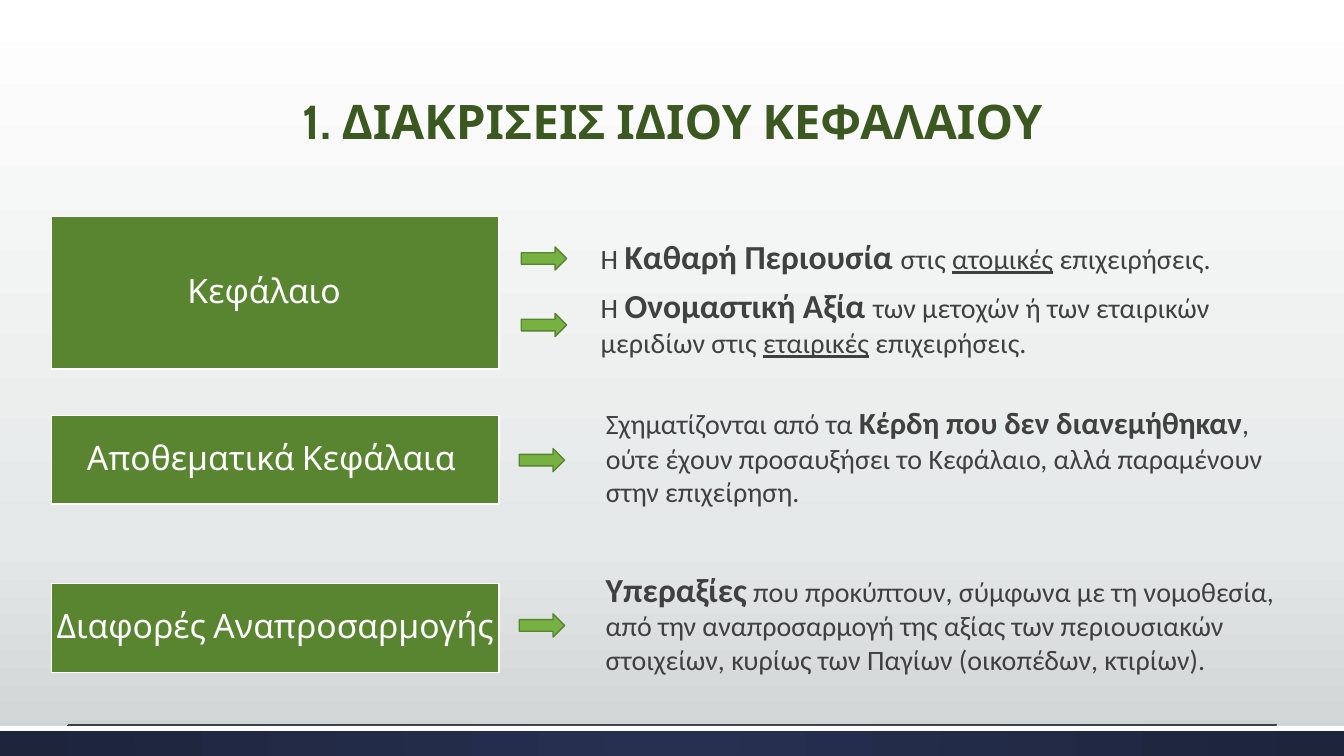
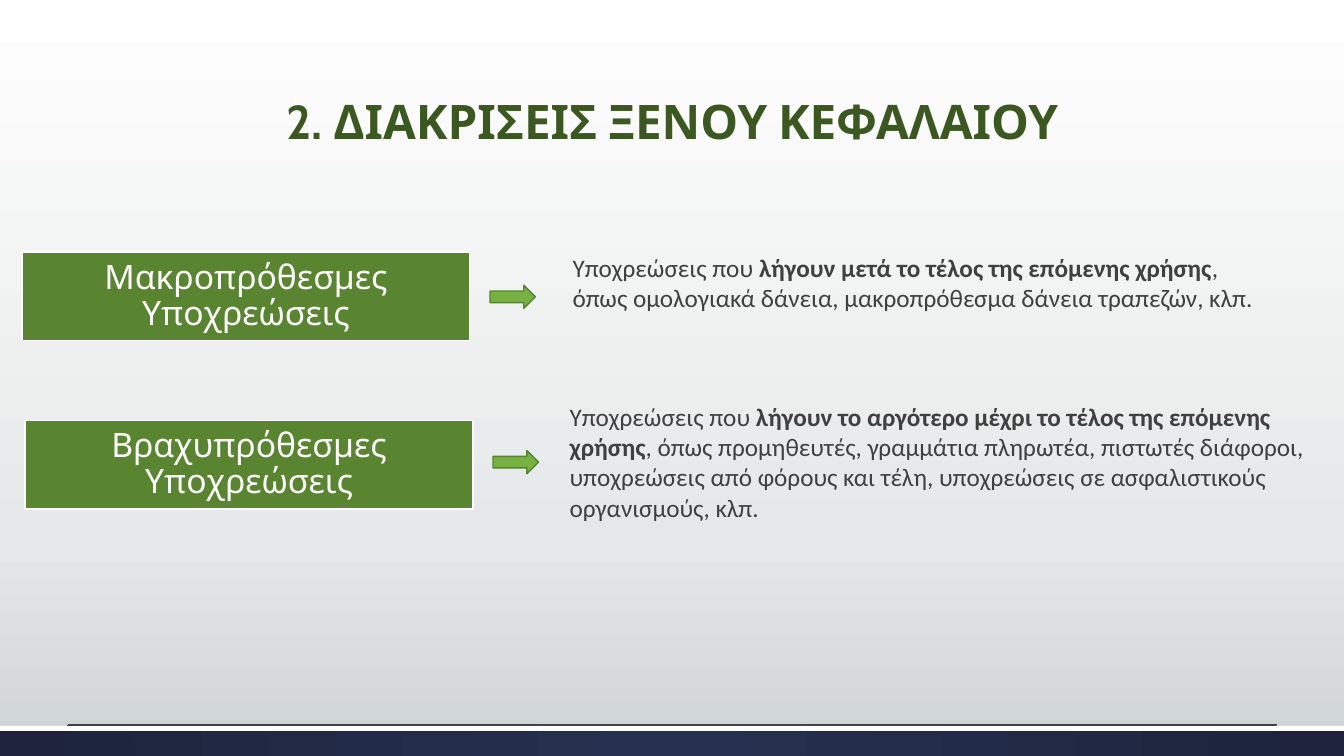
from dataclasses import dataclass

from lxml.etree import SubElement
from pptx import Presentation
from pptx.dml.color import RGBColor
from pptx.enum.shapes import MSO_CONNECTOR, MSO_SHAPE
from pptx.enum.text import MSO_ANCHOR, MSO_AUTO_SIZE, PP_ALIGN
from pptx.oxml.ns import qn
from pptx.util import Inches, Pt


@dataclass(frozen=True)
class Theme:
    title: str = "3C5821"
    label: str = "598531"
    arrow: str = "77B142"
    arrow_line: str = "588331"
    text: str = "404040"
    white: str = "FFFFFF"
    background: tuple = ((0, "FFFFFF"), (72, "E5E8E8"), (100, "CDD2D2"))
    footer: tuple = ((0, "263050"), (100, "1D243C"))
    heading_font: str = "Cabin"
    body_font: str = "Calibri"
    title_size: int = 34
    label_size: int = 24
    strong_size: int = 24
    note_size: int = 20
    small_note_size: int = 18


@dataclass(frozen=True)
class Span:
    """Part of a note that stands out from the rest."""
    text: str
    size: int = 0
    bold: bool = False
    underline: bool = False


def rgb(value):
    return RGBColor.from_string(value)


def set_gradient(element, stops, circular=False):
    """Replace the default gradient inside element with the given stops."""
    grad = next(element.iter(qn("a:gradFill")))
    for child in list(grad):
        grad.remove(child)
    stop_list = SubElement(grad, qn("a:gsLst"))
    for position, color in stops:
        stop = SubElement(stop_list, qn("a:gs"), pos=str(position * 1000))
        SubElement(stop, qn("a:srgbClr"), val=color)
    if circular:
        path = SubElement(grad, qn("a:path"), path="circle")
        SubElement(path, qn("a:fillToRect"), l="50000", t="50000", r="50000", b="50000")
    else:
        SubElement(grad, qn("a:lin"), ang="5400000", scaled="0")


class Deck:
    def __init__(self, theme):
        self.theme = theme
        self.prs = Presentation()
        self.prs.slide_width = Inches(13.33)
        self.prs.slide_height = Inches(7.5)
        self.s = None

    def slide(self, title):
        self.s = self.prs.slides.add_slide(self.prs.slide_layouts[6])
        self.s.background.fill.gradient()
        set_gradient(self.s.element, self.theme.background)
        self.footer()
        self.title(title)

    def shape(self, kind, left, top, width, height, fill=None, line=None):
        sp = self.s.shapes.add_shape(
            kind, Inches(left), Inches(top), Inches(width), Inches(height))
        sp.shadow.inherit = False
        if fill:
            sp.fill.solid()
            sp.fill.fore_color.rgb = rgb(fill)
        if line:
            sp.line.color.rgb = rgb(line)
            sp.line.width = Pt(1)
        else:
            sp.line.fill.background()
        return sp

    def footer(self):
        rule = self.s.shapes.add_connector(
            MSO_CONNECTOR.STRAIGHT, Inches(0.67), Inches(7.19), Inches(12.67), Inches(7.19))
        rule.line.color.rgb = rgb(self.theme.text)
        rule.line.width = Pt(0.75)
        SubElement(rule.element.spPr, qn("a:effectLst"))
        band = self.shape(MSO_SHAPE.RECTANGLE, 0, 7.2, 13.33, 0.3)
        band.fill.gradient()
        set_gradient(band.element, self.theme.footer, circular=True)
        self.shape(MSO_SHAPE.RECTANGLE, 0, 7.2, 13.33, 0.05, self.theme.white)

    def text_box(self, left, top, width, height):
        sp = self.s.shapes.add_textbox(
            Inches(left), Inches(top), Inches(width), Inches(height))
        sp.text_frame.word_wrap = True
        return sp.text_frame

    def style(self, p, font, size, color, bold=False):
        p.font.name = font
        p.font.size = Pt(size)
        p.font.color.rgb = rgb(color)
        p.font.bold = bold

    def heading(self, tf, text, size, color, bold=False):
        p = tf.paragraphs[0]
        p.text = text
        p.alignment = PP_ALIGN.CENTER
        p.line_spacing = 0.9
        self.style(p, self.theme.heading_font, size, color, bold)

    def title(self, text):
        tf = self.text_box(1.47, 0.51, 10.4, 1.03)
        tf.vertical_anchor = MSO_ANCHOR.BOTTOM
        self.heading(tf, text, self.theme.title_size, self.theme.title, bold=True)

    def label(self, left, top, text, height=0.88, right_inset=0.02):
        sp = self.shape(MSO_SHAPE.RECTANGLE, left, top, 4.44, height,
                        self.theme.label, self.theme.white)
        tf = sp.text_frame
        tf.vertical_anchor = MSO_ANCHOR.MIDDLE
        tf.margin_left = tf.margin_top = tf.margin_bottom = Inches(0.02)
        tf.margin_right = Inches(right_inset)
        self.heading(tf, text, self.theme.label_size, self.theme.white)

    def arrow(self, left, top):
        self.shape(MSO_SHAPE.RIGHT_ARROW, left, top, 0.45, 0.23,
                   self.theme.arrow, self.theme.arrow_line)

    def note(self, left, top, width, height, spans, size=None):
        tf = self.text_box(left, top, width, height)
        tf.auto_size = MSO_AUTO_SIZE.SHAPE_TO_FIT_TEXT
        p = tf.paragraphs[0]
        self.style(p, self.theme.body_font, size or self.theme.note_size, self.theme.text)
        for span in spans:
            if isinstance(span, str):
                span = Span(span)
            r = p.add_run()
            r.text = span.text
            if span.size:
                r.font.size = Pt(span.size)
            if span.bold:
                r.font.bold = True
            if span.underline:
                r.font.underline = True


def equity_slide(deck):
    strong = deck.theme.strong_size
    deck.slide("1. ΔΙΑΚΡΙΣΕΙΣ ΙΔΙΟΥ ΚΕΦΑΛΑΙΟΥ")
    deck.label(0.51, 2.15, "Κεφάλαιο", height=1.51, right_inset=0.24)
    deck.label(0.51, 4.12, "Αποθεματικά Κεφάλαια", right_inset=0.1)
    deck.label(0.51, 5.79, "Διαφορές Αναπροσαρμογής")
    for left, top in ((5.17, 2.45), (5.17, 3.11), (5.15, 4.45), (5.15, 6.09)):
        deck.arrow(left, top)
    deck.note(5.86, 2.29, 7.02, 0.5, [
        "Η ", Span("Καθαρή Περιουσία ", strong, bold=True), "στις ",
        Span("ατομικές", underline=True), " επιχειρήσεις."])
    deck.note(5.86, 2.78, 7.02, 0.84, [
        "Η ", Span("Ονομαστική Αξία ", strong, bold=True),
        "των μετοχών ή των εταιρικών μεριδίων στις ",
        Span("εταιρικές", underline=True), " επιχειρήσεις."])
    deck.note(5.91, 3.96, 7.02, 1.14, [
        "Σχηματίζονται από τα ", Span("Κέρδη που δεν διανεμήθηκαν", 22, bold=True),
        ", ούτε έχουν προσαυξήσει το Κεφάλαιο, αλλά παραμένουν στην επιχείρηση."])
    deck.note(5.91, 5.59, 7.23, 1.18, [
        Span("Υπεραξίες", strong, bold=True),
        " που προκύπτουν, σύμφωνα με τη νομοθεσία, από την αναπροσαρμογή της αξίας "
        "των περιουσιακών στοιχείων, κυρίως των Παγίων (οικοπέδων, κτιρίων)."])


def liabilities_slide(deck):
    size = deck.theme.small_note_size
    deck.slide("2. ΔΙΑΚΡΙΣΕΙΣ ΞΕΝΟΥ ΚΕΦΑΛΑΙΟΥ")
    deck.label(0.22, 2.5, "Μακροπρόθεσμες Υποχρεώσεις")
    deck.label(0.25, 4.17, "Βραχυπρόθεσμες Υποχρεώσεις")
    deck.arrow(4.86, 2.83)
    deck.arrow(4.89, 4.47)
    deck.note(5.58, 2.45, 7.02, 1.01, [
        "Υποχρεώσεις που ",
        Span("λήγουν μετά το τέλος της επόμενης χρήσης", bold=True),
        ", όπως ομολογιακά δάνεια, μακροπρόθεσμα δάνεια τραπεζών, κλπ."], size)
    deck.note(5.55, 3.93, 7.58, 1.31, [
        "Υποχρεώσεις που ",
        Span("λήγουν το αργότερο μέχρι το τέλος της επόμενης χρήσης", bold=True),
        ", όπως προμηθευτές, γραμμάτια πληρωτέα, πιστωτές διάφοροι, υποχρεώσεις "
        "από φόρους και τέλη, υποχρεώσεις σε ασφαλιστικούς οργανισμούς, κλπ."], size)


def main():
    deck = Deck(Theme())
    equity_slide(deck)
    liabilities_slide(deck)
    deck.prs.save("out.pptx")


if __name__ == "__main__":
    main()
